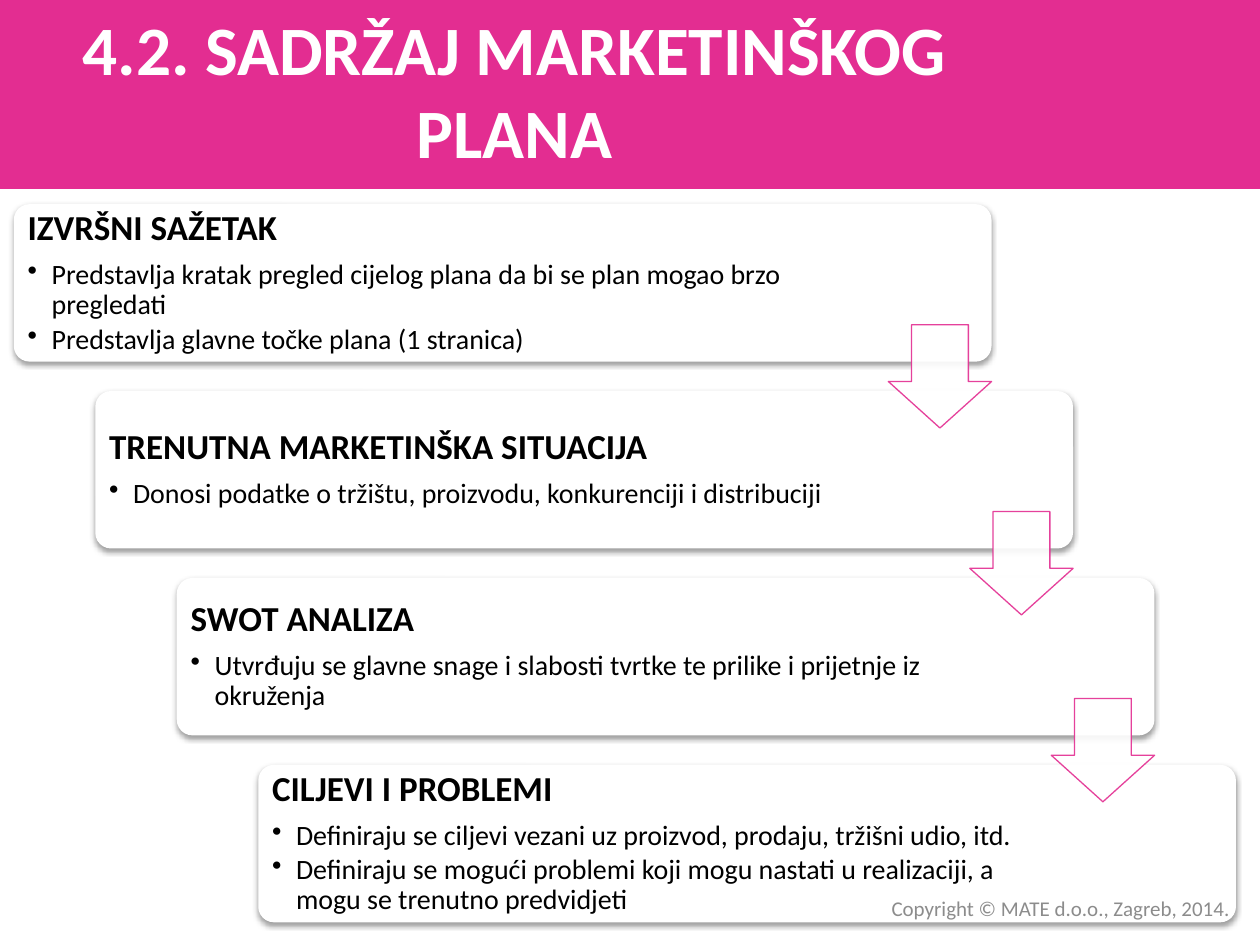
import pptx
import pptx.dml.color
import pptx.enum.shapes
import pptx.enum.text
import pptx.oxml
import pptx.oxml.ns
import pptx.util
from lxml import etree

Inches = pptx.util.Inches
Pt = pptx.util.Pt
RGBColor = pptx.dml.color.RGBColor
SHAPE = pptx.enum.shapes.MSO_SHAPE
ALIGN = pptx.enum.text.PP_ALIGN
qn = pptx.oxml.ns.qn

PINK = RGBColor(0xE3, 0x2D, 0x91)
WHITE = RGBColor(0xFF, 0xFF, 0xFF)
BLACK = RGBColor(0x00, 0x00, 0x00)
GREY = RGBColor(0x8C, 0x8C, 0x8C)
FONT = "Calibri"

SLIDE_W, SLIDE_H = 10, 7.5
BAND_H = SLIDE_H / 5

STEPS = [
    ("IZVRŠNI SAŽETAK", [
        "Predstavlja kratak pregled cijelog plana da bi se plan mogao brzo pregledati",
        "Predstavlja glavne točke plana (1 stranica)"]),
    ("TRENUTNA MARKETINŠKA SITUACIJA", [
        "Donosi podatke o tržištu, proizvodu, konkurenciji i distribuciji"]),
    ("SWOT ANALIZA", [
        "Utvrđuju se glavne snage i slabosti tvrtke te prilike i prijetnje iz okruženja"]),
    ("CILJEVI I PROBLEMI", [
        "Definiraju se ciljevi vezani uz proizvod, prodaju, tržišni udio, itd.",
        "Definiraju se mogući problemi koji mogu nastati u realizaciji, a "
        "mogu se trenutno predvidjeti"]),
]

# The cards form a staircase from the upper left to the lower right
STAIR_X, STAIR_Y, STAIR_W, STAIR_H = 0.11, 1.62, 9.7, 5.7
CARD_W, CARD_H = 7.76, 1.25
STEP_X = (STAIR_W - CARD_W) / (len(STEPS) - 1)
STEP_Y = (STAIR_H - CARD_H) / (len(STEPS) - 1)
INSET = 0.03
TEXT_W = 0.8 * CARD_W
ARROW = 0.82

SHADOW = (
    '<a:effectLst xmlns:a="http://schemas.openxmlformats.org/drawingml/2006/main">'
    '<a:outerShdw blurRad="39370" dist="20320" dir="5400000" rotWithShape="0">'
    '<a:srgbClr val="000000"><a:alpha val="38000"/></a:srgbClr>'
    '</a:outerShdw></a:effectLst>')

prs = pptx.Presentation()
prs.slide_width, prs.slide_height = Inches(SLIDE_W), Inches(SLIDE_H)
slide = prs.slides.add_slide(prs.slide_layouts[6])


def add_text_frame(left, top, width, height):
    """Add a wrapping, vertically centred text box and return its frame."""
    box = slide.shapes.add_textbox(*map(Inches, (left, top, width, height)))
    frame = box.text_frame
    frame.word_wrap = True
    frame.vertical_anchor = pptx.enum.text.MSO_ANCHOR.MIDDLE
    return frame


def write(paragraph, text, size, color, bold=False):
    run = paragraph.add_run()
    run.text = text
    run.font.name = FONT
    run.font.size = Pt(size)
    run.font.bold = bold
    run.font.color.rgb = color


band = slide.shapes.add_shape(SHAPE.RECTANGLE, 0, 0, Inches(SLIDE_W), Inches(BAND_H))
band.shadow.inherit = False
band.fill.solid()
band.fill.fore_color.rgb = PINK
band.line.fill.background()

for i, (heading, points) in enumerate(STEPS):
    left, top = STAIR_X + i * STEP_X, STAIR_Y + i * STEP_Y
    card = slide.shapes.add_shape(
        SHAPE.ROUNDED_RECTANGLE, *map(Inches, (left, top, CARD_W, CARD_H)))
    card.adjustments[0] = 0.1
    card.fill.solid()
    card.fill.fore_color.rgb = WHITE
    card.line.fill.background()
    card._element.spPr.append(pptx.oxml.parse_xml(SHADOW))

    frame = add_text_frame(left + INSET, top + INSET, TEXT_W, CARD_H - 2 * INSET)
    frame.margin_left = frame.margin_right = Inches(0.08)
    frame.margin_top = frame.margin_bottom = Inches(0.08)
    title_line = frame.paragraphs[0]
    title_line.line_spacing = 0.9
    title_line.space_after = Pt(7)
    write(title_line, heading, 20, BLACK, bold=True)
    for point in points:
        bullet = frame.add_paragraph()
        bullet.level = 1
        bullet.line_spacing = 0.9
        bullet.space_after = Pt(2.4)
        props = bullet._p.get_or_add_pPr()
        props.set("marL", str(Inches(0.19)))
        props.set("indent", str(-Inches(0.19)))
        etree.SubElement(props, qn("a:buChar")).set("char", "•")
        write(bullet, point, 16, BLACK)

# Each arrow is centred on the gap between two cards
for i in range(len(STEPS) - 1):
    right = STAIR_X + i * STEP_X + CARD_W
    gap_middle = STAIR_Y + i * STEP_Y + (CARD_H + STEP_Y) / 2
    arrow = slide.shapes.add_shape(
        SHAPE.DOWN_ARROW,
        *map(Inches, (right - ARROW, gap_middle - ARROW / 2, ARROW, ARROW)))
    arrow.adjustments[0] = 0.55
    arrow.adjustments[1] = 0.45
    arrow.shadow.inherit = False
    arrow.fill.solid()
    arrow.fill.fore_color.rgb = WHITE
    arrow.line.color.rgb = PINK
    arrow.line.width = Pt(0.75)
    for color in arrow._element.spPr.iter(qn("a:srgbClr")):
        etree.SubElement(color, qn("a:alpha")).set("val", "90000")

title = add_text_frame(0, 0.08, 8.17, 1.25).paragraphs[0]
title.alignment = ALIGN.CENTER
write(title, "4.2. SADRŽAJ MARKETINŠKOG PLANA", 39.6, WHITE, bold=True)

copyright_line = add_text_frame(4.69, 7.06, 5.17, 0.3).paragraphs[0]
copyright_line.alignment = ALIGN.RIGHT
write(copyright_line, "Copyright © MATE d.o.o., Zagreb, 2014.", 12, GREY)

prs.save("out.pptx")
